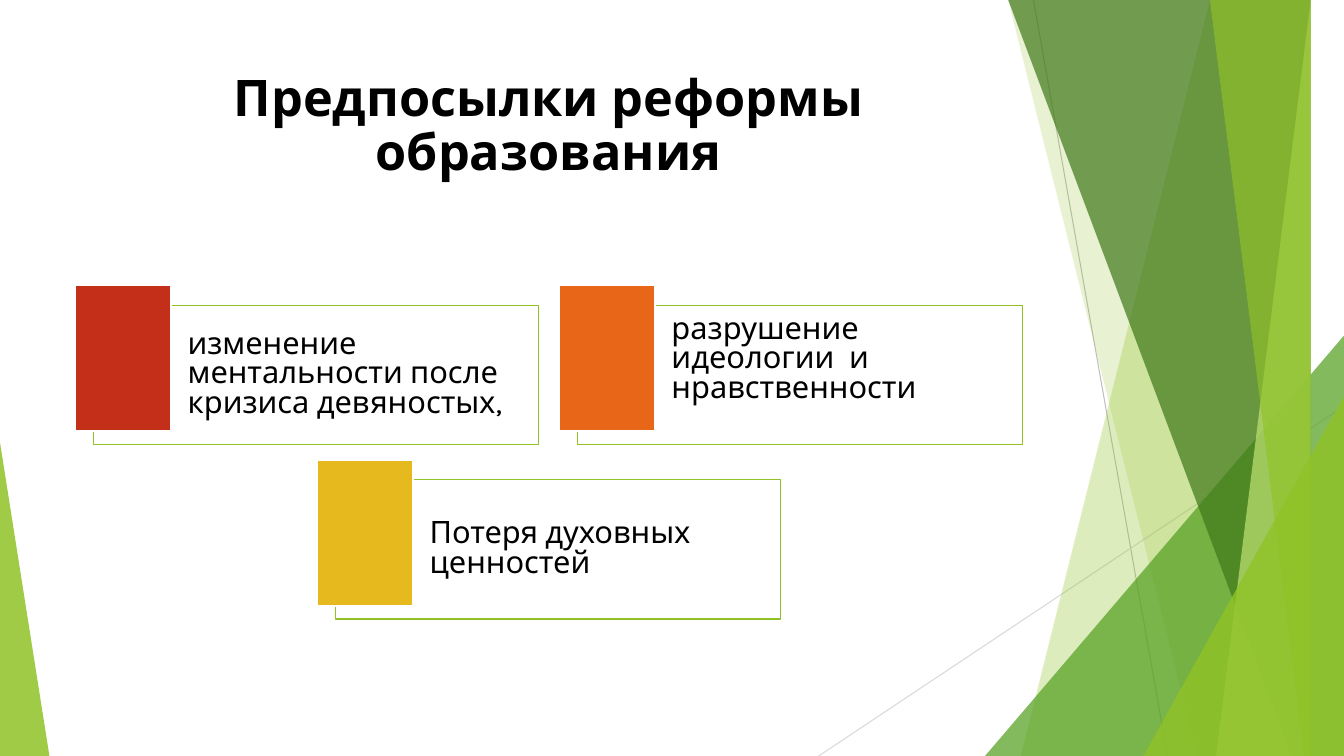
from lxml.etree import SubElement
from pptx import Presentation
from pptx.dml.color import RGBColor
from pptx.enum.shapes import MSO_CONNECTOR as Connector, MSO_SHAPE as Preset
from pptx.enum.text import MSO_ANCHOR as Anchor, MSO_AUTO_SIZE as AutoSize, PP_ALIGN as Align
from pptx.oxml.ns import qn
from pptx.util import Inches, Pt

BLACK = RGBColor(0x00, 0x00, 0x00)
WHITE = RGBColor(0xFF, 0xFF, 0xFF)
GREY = RGBColor(0xBF, 0xBF, 0xBF)
PALE_GREY = RGBColor(0xD9, 0xD9, 0xD9)
LIME = RGBColor(0x90, 0xC2, 0x26)
LIGHT_LIME = RGBColor(0xC0, 0xE4, 0x74)
GREEN = RGBColor(0x54, 0xA0, 0x21)
DARK_GREEN = RGBColor(0x3F, 0x78, 0x19)
RED = RGBColor(0xC4, 0x2F, 0x1A)
ORANGE = RGBColor(0xE7, 0x66, 0x18)
YELLOW = RGBColor(0xE6, 0xB9, 0x1E)

WIDTH, HEIGHT = 13.33, 7.5
CARD_WIDTH, CARD_HEIGHT = 4.41, 1.38
CARD_LEFT, CARD_TOP = 0.93, 3.03
COLUMN_STEP, ROW_STEP = 4.8, 1.73


class SlideBuilder:
    font = "Karla"

    def __init__(self, slide):
        self.slide = slide
        self.shapes = slide.shapes

    def paint(self, shape, color, opacity=100, line=None, line_width=1):
        shape.shadow.inherit = False
        shape.fill.solid()
        shape.fill.fore_color.rgb = color
        if opacity < 100:
            tint = shape._element.spPr.find(qn("a:solidFill"))[0]
            SubElement(tint, qn("a:alpha")).set("val", str(opacity * 1000))
        if line is None:
            shape.line.fill.background()
        else:
            shape.line.color.rgb = line
            shape.line.width = Pt(line_width)

    def add_text(self, paragraph, text, size, bold=False):
        run = paragraph.add_run()
        run.text = text
        run.font.name = self.font
        run.font.size = Pt(size)
        run.font.bold = bold
        run.font.color.rgb = BLACK

    def line(self, start, end, color):
        points = [Inches(value) for value in (*start, *end)]
        connector = self.shapes.add_connector(Connector.STRAIGHT, *points)
        connector.line.color.rgb = color
        connector.line.width = Pt(0.75)
        SubElement(connector._element.spPr, qn("a:effectLst"))

    def slab(self, top_x, bottom_x, color, opacity):
        outline = self.shapes.build_freeform(top_x, -0.01, scale=Inches(1))
        outline.add_line_segments([(WIDTH, -0.01), (WIDTH, HEIGHT), (bottom_x, HEIGHT)])
        self.paint(outline.convert_to_shape(), color, opacity)

    def shape(self, preset, left, top, width, height):
        return self.shapes.add_shape(
            preset, Inches(left), Inches(top), Inches(width), Inches(height))

    def triangle(self, left, top, width, apex, color, opacity):
        shape = self.shape(Preset.ISOSCELES_TRIANGLE, left, top, width, HEIGHT - top)
        shape.adjustments[0] = apex
        self.paint(shape, color, opacity)

    def title(self, text):
        shape = self.shapes.title
        self.shapes._spTree.append(shape._element)
        shape.left, shape.top = Inches(0.74), Inches(0.67)
        shape.width, shape.height = Inches(9.4), Inches(1.44)
        frame = shape.text_frame
        frame.word_wrap = True
        frame.auto_size = AutoSize.NONE
        frame.vertical_anchor = Anchor.TOP
        paragraph = frame.paragraphs[0]
        paragraph.alignment = Align.CENTER
        paragraph.line_spacing = 0.9
        self.add_text(paragraph, text, 36, bold=True)

    def card(self, column, row, text, color, trailing_break=False):
        left = CARD_LEFT + column * COLUMN_STEP
        top = CARD_TOP + row * ROW_STEP
        box = self.shape(Preset.RECTANGLE, left, top, CARD_WIDTH, CARD_HEIGHT)
        self.paint(box, WHITE, 40, LIME, 1)
        frame = box.text_frame
        frame.word_wrap = True
        frame.vertical_anchor = Anchor.MIDDLE
        frame.margin_left = Inches(0.93)
        frame.margin_top = frame.margin_right = frame.margin_bottom = Inches(0.09)
        paragraph = frame.paragraphs[0]
        paragraph.alignment = Align.LEFT
        paragraph.line_spacing = 0.8
        self.add_text(paragraph, text, 22)
        if trailing_break:
            paragraph.add_line_break()
            self.add_text(paragraph, "", 22)
        swatch = self.shape(Preset.RECTANGLE, left - 0.19, top - 0.2, 0.96, 1.45)
        self.paint(swatch, color, line=WHITE, line_width=1.5)


def main():
    presentation = Presentation()
    presentation.slide_width = Inches(WIDTH)
    presentation.slide_height = Inches(HEIGHT)
    slide = presentation.slides.add_slide(presentation.slide_layouts[5])
    builder = SlideBuilder(slide)

    builder.line((10.25, 0), (11.58, HEIGHT), GREY)
    builder.line((WIDTH, 4.03), (8.12, HEIGHT), PALE_GREY)
    builder.slab(12.28, 10.04, LIME, 30)
    builder.slab(10.5, 11.83, LIME, 20)
    builder.triangle(9.77, 3.33, 3.56, 1, GREEN, 72)
    builder.slab(10.21, 12.91, DARK_GREEN, 70)
    builder.slab(13.03, 11.92, LIGHT_LIME, 70)
    builder.slab(11.96, 13.18, LIME, 65)
    builder.triangle(11.34, 3.93, 1.99, 1, LIME, 80)
    builder.triangle(0, 4.39, 0.49, 0, LIME, 85)

    builder.title("Предпосылки реформы образования")
    builder.card(0, 0, "изменение ментальности после кризиса девяностых,", RED)
    builder.card(1, 0, "разрушение идеологии  и нравственности", ORANGE, trailing_break=True)
    builder.card(0.5, 1, "Потеря духовных ценностей", YELLOW)

    presentation.save("out.pptx")


if __name__ == "__main__":
    main()
